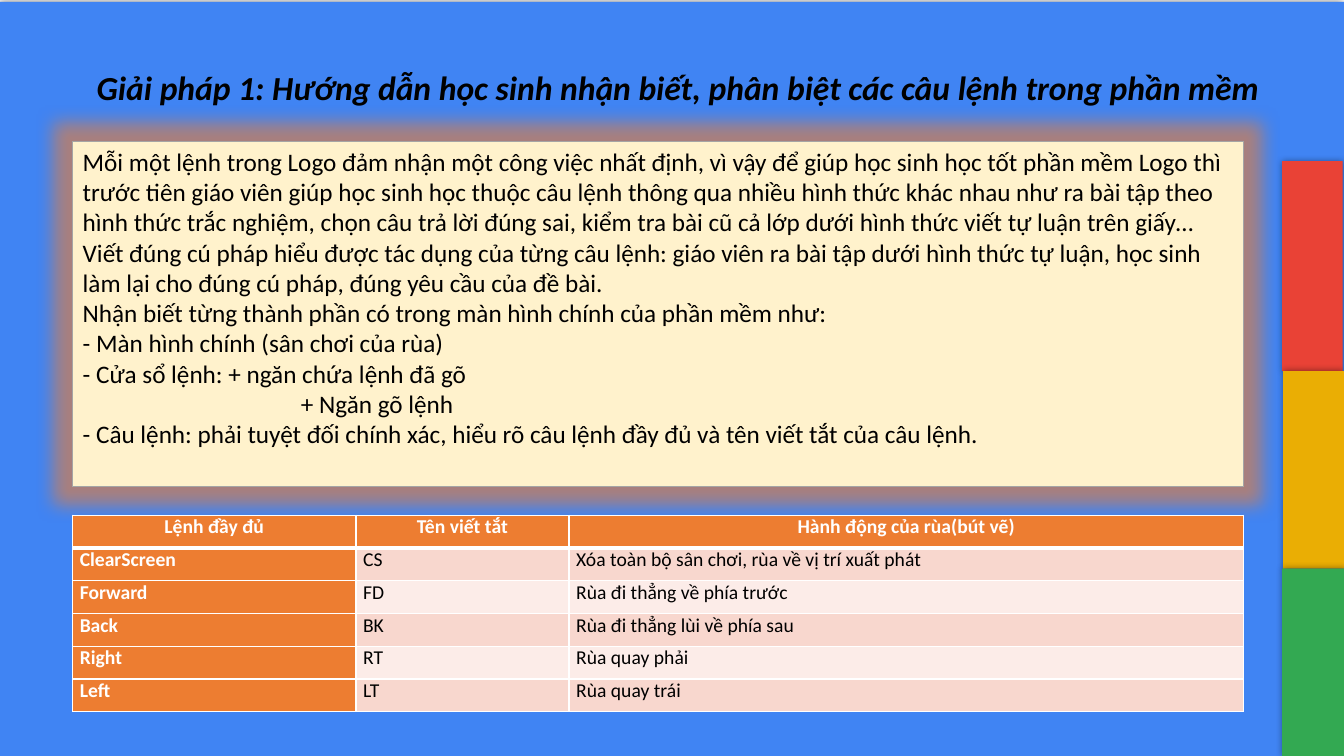
"""Build the slide on recognising and telling apart the Logo commands."""
from dataclasses import dataclass

from lxml.etree import SubElement
from pptx import Presentation
from pptx.dml.color import RGBColor
from pptx.enum.shapes import MSO_SHAPE
from pptx.enum.text import MSO_ANCHOR as Anchor, MSO_AUTO_SIZE as AutoSize, PP_ALIGN as Align
from pptx.oxml.ns import qn
from pptx.util import Cm, Pt

FONT = "Calibri"
BLACK, WHITE, ORANGE = "000000", "FFFFFF", "ED7D31"
BANDS = ("F8D7CE", "FCECE8")
TITLE = "Giải pháp 1: Hướng dẫn học sinh nhận biết, phân biệt các câu lệnh trong phần mềm"


@dataclass(frozen=True)
class Panel:
    """A plain coloured rectangle, in centimetres."""
    left: float
    top: float
    width: float
    height: float
    fill: str


@dataclass(frozen=True)
class Line:
    """A paragraph of the body with its left margin in centimetres."""
    text: str
    margin: float = 0


@dataclass(frozen=True)
class Command:
    """A table row: full name, short name and effect."""
    name: str
    short: str
    action: str


PANELS = (
    Panel(0, 0.05, 33.87, 19, "4084F3"),
    Panel(32.31, 4.06, 1.53, 5.29, "E94236"),
    Panel(32.34, 9.35, 1.53, 4.98, "EAAE04"),
    Panel(32.31, 14.33, 1.63, 4.72, "33A952"),
)
LINES = (
    Line("Mỗi một lệnh trong Logo đảm nhận một công việc nhất định, vì vậy để giúp học sinh "
         "học tốt phần mềm Logo thì trước tiên giáo viên giúp học sinh học thuộc câu lệnh "
         "thông qua nhiều hình thức khác nhau như ra bài tập theo hình thức trắc nghiệm, "
         "chọn câu trả lời đúng sai, kiểm tra bài cũ cả lớp dưới hình thức viết tự luận "
         "trên giấy…"),
    Line("Viết đúng cú pháp hiểu được tác dụng của từng câu lệnh: giáo viên ra bài tập dưới "
         "hình thức tự luận, học sinh làm lại cho đúng cú pháp, đúng yêu cầu của đề bài."),
    Line("Nhận biết từng thành phần có trong màn hình chính của phần mềm như:"),
    Line("- Màn hình chính (sân chơi của rùa)"),
    Line("- Cửa sổ lệnh: + ngăn chứa lệnh đã gõ"),
    Line("+ Ngăn gõ lệnh", 5.5),
    Line("- Câu lệnh: phải tuyệt đối chính xác, hiểu rõ câu lệnh đầy đủ và tên viết tắt "
         "của câu lệnh."),
)
HEADER = Command("Lệnh đầy đủ", "Tên viết tắt", "Hành động của rùa(bút vẽ)")
COMMANDS = (
    Command("ClearScreen", "CS", "Xóa toàn bộ sân chơi, rùa về vị trí xuất phát"),
    Command("Forward", "FD", "Rùa đi thẳng về phía trước"),
    Command("Back", "BK", "Rùa đi thẳng lùi về phía sau"),
    Command("Right", "RT", "Rùa quay phải"),
    Command("Left", "LT", "Rùa quay trái"),
)
COLUMNS = (7.14, 5.37, 17)


def paint(fmt, colour: str) -> None:
    """Give a fill a solid hex colour."""
    fmt.solid()
    fmt.fore_color.rgb = RGBColor.from_string(colour)


def add_effect(sp, tag: str, colour: str, alpha: int, **attrs: int) -> None:
    """Replace the inherited effects with one shadow or glow."""
    sp.shadow.inherit = False
    effects = sp._element.spPr.find(qn("a:effectLst"))
    effect = SubElement(effects, qn(tag), {k: str(v) for k, v in attrs.items()})
    clr = SubElement(effect, qn("a:srgbClr"), val=colour)
    SubElement(clr, qn("a:alpha"), val=str(alpha * 1000))


def write(p, text: str, *, size: float, colour: str = BLACK, bold: bool = False,
          italic: bool = False, align=Align.LEFT, before: float = 0) -> None:
    """Write one formatted run into a paragraph."""
    p.alignment, p.space_before, p.line_spacing = align, Pt(before), 1.0
    r = p.add_run()
    r.text = text
    f = r.font
    f.name, f.size, f.bold, f.italic = FONT, Pt(size), bold, italic
    f.color.rgb = RGBColor.from_string(colour)


def place(s, sp, left: float, top: float, width: float, height: float):
    """Bring a placeholder to the front, place it and return its text frame."""
    s.shapes._spTree.append(sp._element)
    sp.left, sp.top, sp.width, sp.height = Cm(left), Cm(top), Cm(width), Cm(height)
    tf = sp.text_frame
    tf.word_wrap, tf.auto_size, tf.vertical_anchor = True, AutoSize.NONE, Anchor.TOP
    return tf


def add_panel(s, panel: Panel) -> None:
    """Draw a softly shadowed rectangle without an outline."""
    sp = s.shapes.add_shape(MSO_SHAPE.RECTANGLE, Cm(panel.left), Cm(panel.top),
                            Cm(panel.width), Cm(panel.height))
    paint(sp.fill, panel.fill)
    sp.line.fill.background()
    add_effect(sp, "a:outerShdw", BLACK, 40, blurRad=Pt(5), dist=0, dir=0)


def fill_body(s, sp) -> None:
    """Format the body placeholder as a glowing box and write its lines."""
    tf = place(s, sp, 1.83, 3.56, 29.51, 8.71)
    paint(sp.fill, "FFF2CC")
    paint(sp.line.fill, "A5A5A5")
    sp.line.width = Pt(0.75)
    add_effect(sp, "a:glow", ORANGE, 60, rad=Cm(0.89))
    for i, line in enumerate(LINES):
        p = tf.add_paragraph() if i else tf.paragraphs[0]
        write(p, line.text, size=18)
        pPr = p._p.get_or_add_pPr()
        pPr.set("marL", str(Cm(line.margin)))
        pPr.set("indent", "0")
        SubElement(pPr, qn("a:buNone"))


def format_cell(cell, text: str, fill: str, header: bool, strong: bool) -> None:
    """Write a table cell with white borders and a solid fill."""
    cell.margin_left = cell.margin_right = Cm(0.18)
    cell.margin_top = cell.margin_bottom = 0
    write(cell.text_frame.paragraphs[0], text, size=14, bold=strong, before=6,
          colour=WHITE if strong else BLACK, align=Align.CENTER if header else Align.JUSTIFY)
    tcPr = cell._tc.get_or_add_tcPr()
    for side in "LRTB":
        width = Pt(3 if header and side == "B" else 1)
        ln = SubElement(tcPr, qn(f"a:ln{side}"), w=str(width))
        SubElement(SubElement(ln, qn("a:solidFill")), qn("a:srgbClr"), val=WHITE)
    paint(cell.fill, fill)


def add_commands(s) -> None:
    """Add the table of commands."""
    rows = (HEADER, *COMMANDS)
    table = s.shapes.add_table(len(rows), len(COLUMNS), Cm(1.83), Cm(12.98),
                               Cm(sum(COLUMNS)), Cm(4.96)).table
    for column, width in zip(table.columns, COLUMNS):
        column.width = Cm(width)
    for i, row in enumerate(rows):
        for j, text in enumerate((row.name, row.short, row.action)):
            strong = i == 0 or j == 0
            fill = ORANGE if strong else BANDS[(i - 1) % 2]
            format_cell(table.cell(i, j), text, fill, i == 0, strong)


def main() -> None:
    """Build and save the presentation."""
    prs = Presentation()
    prs.slide_width, prs.slide_height = Cm(33.87), Cm(19.05)
    s = prs.slides.add_slide(prs.slide_layouts[1])
    title, body = s.placeholders
    for panel in PANELS:
        add_panel(s, panel)
    tf = place(s, title, 2.18, 1.57, 30.48, 1.27)
    write(tf.paragraphs[0], TITLE, size=24, bold=True, italic=True)
    fill_body(s, body)
    add_commands(s)
    prs.save("out.pptx")


if __name__ == "__main__":
    main()
